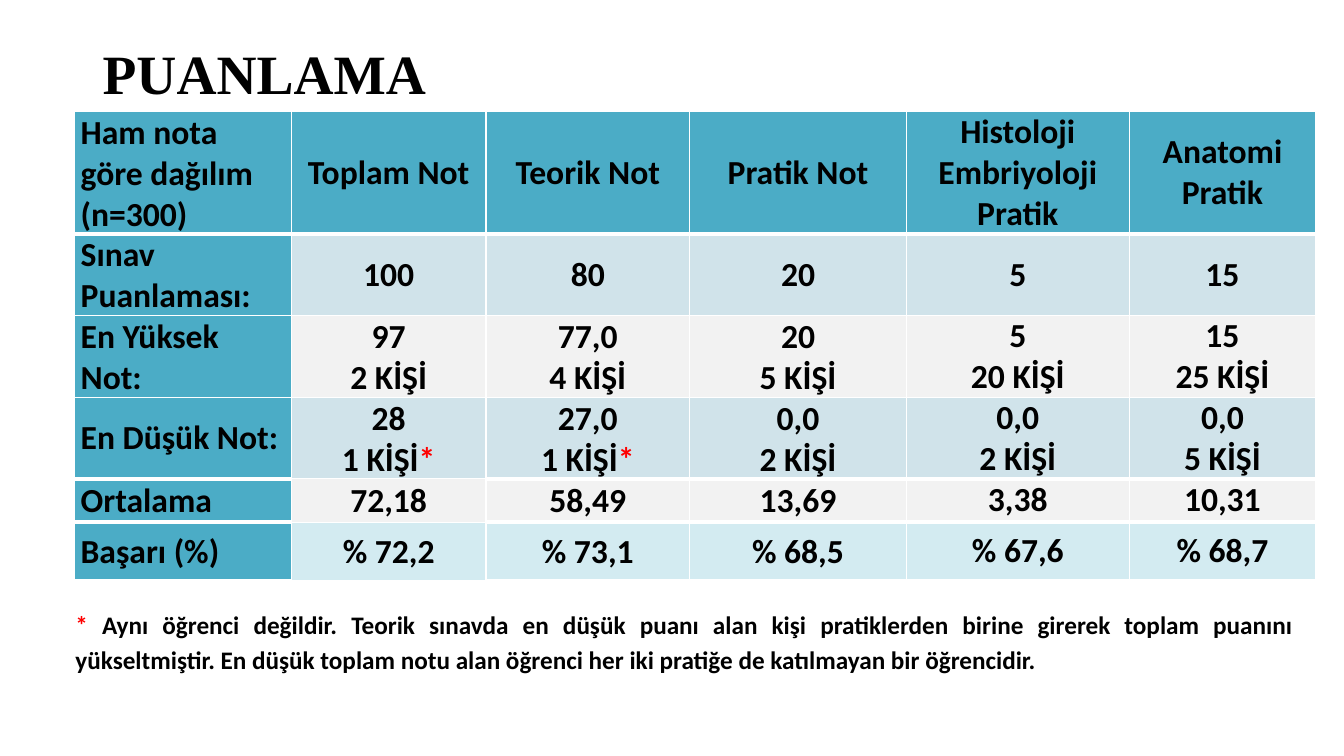
"""Build the PUANLAMA grading summary slide."""
from dataclasses import dataclass

from lxml.etree import SubElement
from pptx import Presentation
from pptx.dml.color import RGBColor as Rgb
from pptx.enum.text import MSO_VERTICAL_ANCHOR as Anchor, PP_PARAGRAPH_ALIGNMENT as Align
from pptx.oxml.ns import qn
from pptx.util import Pt

PX = 9144


@dataclass(frozen=True)
class Theme:
    heading_font: str = "Times New Roman"
    body_font: str = "Calibri"
    title_size: float = 39.6
    table_size: int = 24
    note_size: int = 18
    ink: str = "000000"
    mark: str = "FF0000"
    rule: str = "FFFFFF"
    header: str = "4BACC6"
    bands: tuple = ("D0E3EA", "F2F2F2", "D0E3EA", "F2F2F2", "D3EBF1")


THEME = Theme()
COLUMN_WIDTHS = (215, 193, 202, 215, 221, 185)
ROW_HEIGHTS = (85, 20, 77, 77, 43, 58)
RULE_WEIGHTS = (1, 3, 1, 1, 3, 3, 3)
TOTAL_COLUMN = 1
FIRST_SUBSCORE_COLUMN = 4
GRADES = (
    ("Ham nota göre dağılım\n(n=300)", "Toplam Not", "Teorik Not", "Pratik Not",
     "Histoloji Embriyoloji Pratik", "Anatomi Pratik"),
    ("Sınav Puanlaması:", "100", "80", "20", "5", "15"),
    ("En Yüksek Not:", "97\n2 KİŞİ", "77,0\n4 KİŞİ", "20\n5 KİŞİ", "5\n20 KİŞİ", "15\n25 KİŞİ"),
    ("En Düşük Not:", "28\n1 KİŞİ*", "27,0\n1 KİŞİ*", "0,0\n2 KİŞİ", "0,0\n2 KİŞİ", "0,0\n5 KİŞİ"),
    ("Ortalama", "72,18", "58,49", "13,69", "3,38", "10,31"),
    ("Başarı (%)", "% 72,2", "% 73,1", "% 68,5", "% 67,6", "% 68,7"),
)
NOTE = ("* Aynı öğrenci değildir. Teorik sınavda en düşük puanı alan kişi pratiklerden birine "
        "girerek toplam puanını yükseltmiştir. En düşük toplam notu alan öğrenci her iki "
        "pratiğe de katılmayan bir öğrencidir.")


def write_line(paragraph, line, size, font, align):
    """Write one bold line, with any asterisk in the mark colour."""
    paragraph.alignment = align
    for piece in line.partition("*"):
        if piece:
            run = paragraph.add_run()
            run.text = piece
            run.font.size = Pt(size)
            run.font.name = font
            run.font.bold = True
            run.font.color.rgb = Rgb.from_string(THEME.mark if piece == "*" else THEME.ink)


def add_line_box(slide, box, line, size, font, align, anchor, spacing):
    """Add a wrapping text box of one paragraph and return that paragraph."""
    frame = slide.shapes.add_textbox(*(length * PX for length in box)).text_frame
    frame.word_wrap = True
    frame.vertical_anchor = anchor
    paragraph = frame.paragraphs[0]
    paragraph.line_spacing = spacing
    write_line(paragraph, line, size, font, align)
    return paragraph


def rule_cell(cell, row, column):
    """Draw the four borders of a cell."""
    top, bottom = RULE_WEIGHTS[row:row + 2]
    if column == TOTAL_COLUMN and row >= 3:
        top = bottom = 1
    properties = cell._tc.get_or_add_tcPr()
    for side, weight in (("L", 1), ("R", 1), ("T", top), ("B", bottom)):
        border = SubElement(properties, qn(f"a:ln{side}"), w=str(Pt(weight)))
        SubElement(SubElement(border, qn("a:solidFill")), qn("a:srgbClr"), val=THEME.rule)


def fill_cell(cell, row, column, text):
    """Give a cell its borders, fill, margins and text."""
    rule_cell(cell, row, column)
    is_header = row == 0 or column == 0
    cell.fill.solid()
    cell.fill.fore_color.rgb = Rgb.from_string(THEME.header if is_header else THEME.bands[row - 1])
    cell.vertical_anchor = Anchor.MIDDLE
    is_subscore = column >= FIRST_SUBSCORE_COLUMN
    cell.margin_left = cell.margin_right = 0 if is_subscore else 6 * PX
    cell.margin_top = 0 if is_subscore else PX
    cell.margin_bottom = 0
    frame = cell.text_frame
    for index, line in enumerate(text.split("\n")):
        paragraph = frame.add_paragraph() if index else frame.paragraphs[0]
        write_line(paragraph, line, THEME.table_size, THEME.body_font,
                   Align.CENTER if column else Align.LEFT)


def add_grades(slide, left, top, width, height):
    """Add the grade table."""
    holder = slide.shapes.add_table(len(GRADES), len(COLUMN_WIDTHS),
                                    left * PX, top * PX, width * PX, height * PX)
    grades = holder.table
    grades.first_row = grades.horz_banding = False
    for column, column_width in zip(grades.columns, COLUMN_WIDTHS):
        column.width = column_width * PX
    for row, row_height in zip(grades.rows, ROW_HEIGHTS):
        row.height = row_height * PX
    holder.width, holder.height = width * PX, height * PX
    for row, texts in enumerate(GRADES):
        for column, text in enumerate(texts):
            fill_cell(grades.cell(row, column), row, column, text)


def main():
    """Build and save the slide."""
    deck = Presentation()
    deck.slide_width, deck.slide_height = 1333 * PX, 750 * PX
    slide = deck.slides.add_slide(deck.slide_layouts[6])
    add_line_box(slide, (92, 40, 1150, 72), "PUANLAMA", THEME.title_size, THEME.heading_font,
                 Align.LEFT, Anchor.MIDDLE, 0.9)
    add_grades(slide, 74, 111, 1231, 463)
    note = add_line_box(slide, (15, 595, 1278, 129), NOTE, THEME.note_size, THEME.body_font,
                        Align.JUSTIFY, Anchor.TOP, 1.15)
    note.space_after = Pt(10)
    note._p.get_or_add_pPr().set("marL", str(50 * PX))
    deck.save("out.pptx")


if __name__ == "__main__":
    main()
